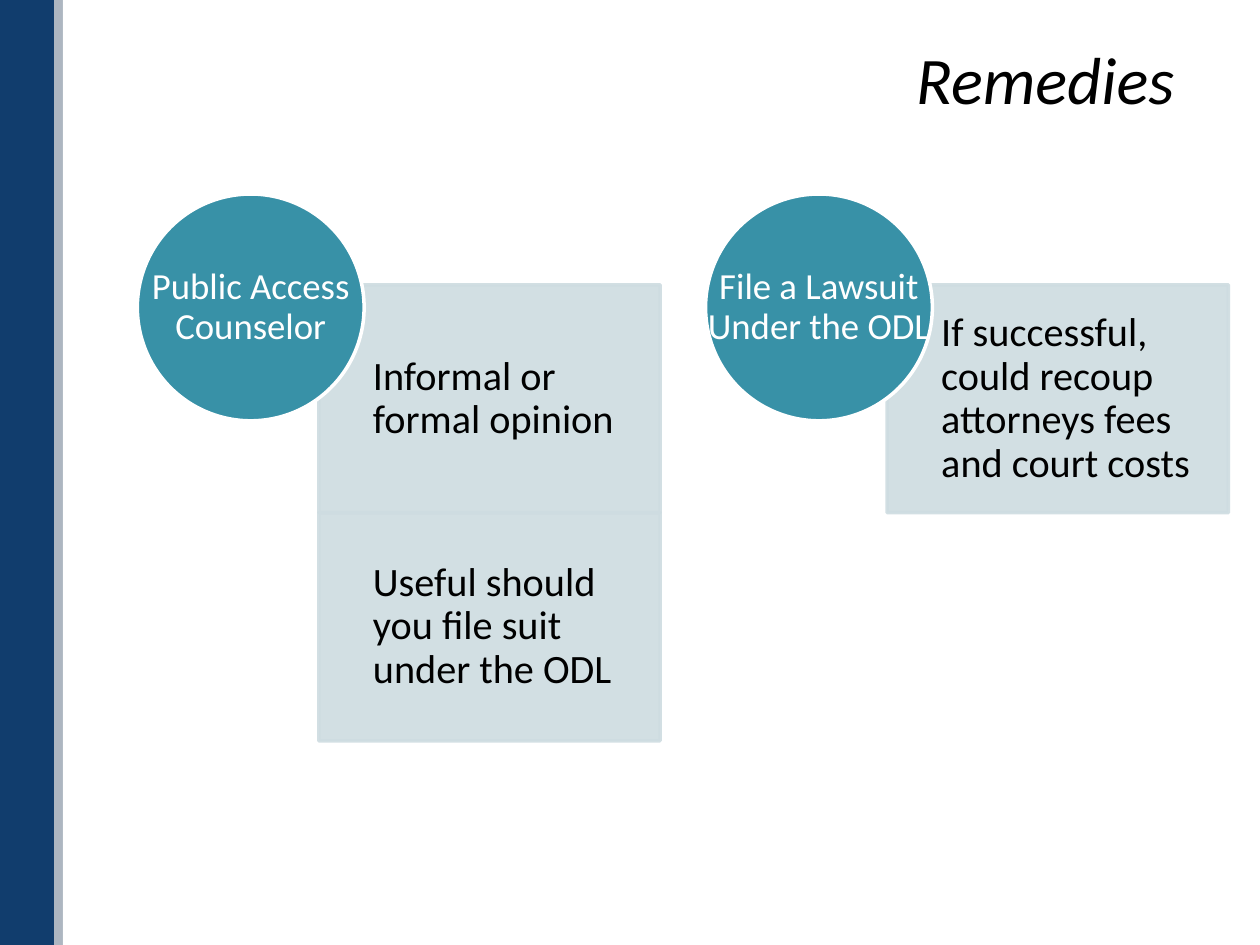
from dataclasses import dataclass

from lxml.etree import SubElement
from pptx import Presentation
from pptx.dml.color import RGBColor
from pptx.enum.shapes import MSO_SHAPE
from pptx.enum.text import MSO_ANCHOR, PP_ALIGN
from pptx.oxml.ns import qn
from pptx.util import Inches, Pt

NAVY = RGBColor(0x11, 0x3D, 0x6D)
GREY = RGBColor(0xD9, 0xD9, 0xD9)
PALE = RGBColor(0xCE, 0xDC, 0xE1)
TEAL = RGBColor(0x38, 0x91, 0xA7)
WHITE = RGBColor(0xFF, 0xFF, 0xFF)
BLACK = RGBColor(0, 0, 0)

CARD_WIDTH, CARD_HEIGHT, CARD_TOP = 2.71, 1.81, 2.26
CARD_OFFSET, CARD_INDENT = 1.44, 0.43
CIRCLE_SIZE, CIRCLE_TOP = 1.8, 1.54
FIRST_LEFT, COLUMN_STEP = 1.09, 4.51


@dataclass(frozen=True)
class Area:
    left: float
    top: float
    width: float
    height: float

    def lengths(self) -> list:
        return [Inches(n) for n in (self.left, self.top, self.width, self.height)]


@dataclass(frozen=True)
class Remedy:
    name: str
    details: tuple[str, ...]


REMEDIES = (
    Remedy("Public Access Counselor",
           ("Informal or formal opinion", "Useful should you file suit under the ODL")),
    Remedy("File a Lawsuit Under the ODL",
           ("If successful, could recoup attorneys fees and court costs",)),
)


def set_opacity(fill_parent, percent: int) -> None:
    """Make the solid colour under a fill or line element translucent."""
    color = fill_parent.find(qn("a:solidFill"))[0]
    SubElement(color, qn("a:alpha"), val=str(percent * 1000))


def add_figure(slide, kind: MSO_SHAPE, area: Area, fill: RGBColor,
               line: RGBColor | None = None, opacity: int = 100) -> None:
    figure = slide.shapes.add_shape(kind, *area.lengths())
    figure.shadow.inherit = False
    figure.fill.solid()
    figure.fill.fore_color.rgb = fill
    if line is None:
        figure.line.fill.background()
    else:
        figure.line.color.rgb = line
        figure.line.width = Pt(2)
    if opacity < 100:
        properties = figure.element.spPr
        set_opacity(properties, opacity)
        if line is not None:
            set_opacity(properties.find(qn("a:ln")), opacity)


def add_text(slide, area: Area, text: str, size: int, color: RGBColor,
             align: PP_ALIGN, margins: tuple[float, float, float, float],
             spacing: float = 0.9, italic: bool = False) -> None:
    """Add a vertically centred text box; margins run left, top, right, bottom."""
    frame = slide.shapes.add_textbox(*area.lengths()).text_frame
    left, top, right, bottom = (Inches(margin) for margin in margins)
    frame_format = {
        "word_wrap": True, "vertical_anchor": MSO_ANCHOR.MIDDLE,
        "margin_left": left, "margin_top": top,
        "margin_right": right, "margin_bottom": bottom,
    }
    for name, value in frame_format.items():
        setattr(frame, name, value)
    para = frame.paragraphs[0]
    para.alignment = align
    para.line_spacing = spacing
    span = para.add_run()
    span.text = text
    for name, value in {"name": "Calibri", "size": Pt(size), "italic": italic}.items():
        setattr(span.font, name, value)
    span.font.color.rgb = color


def add_remedy(slide, remedy: Remedy, left: float) -> None:
    """Draw the stacked detail cards with the name circle over their corner."""
    card_left = left + CARD_OFFSET
    for row, detail in enumerate(remedy.details):
        top = CARD_TOP + row * CARD_HEIGHT
        add_figure(slide, MSO_SHAPE.RECTANGLE,
                   Area(card_left, top, CARD_WIDTH, CARD_HEIGHT), PALE, PALE, 90)
        add_text(slide, Area(card_left + CARD_INDENT, top,
                             CARD_WIDTH - CARD_INDENT, CARD_HEIGHT),
                 detail, 23, BLACK, PP_ALIGN.LEFT, (0, 0.18, 0.18, 0.18))
    circle = Area(left, CIRCLE_TOP, CIRCLE_SIZE, CIRCLE_SIZE)
    add_figure(slide, MSO_SHAPE.OVAL, circle, TEAL, WHITE)
    add_text(slide, circle, remedy.name, 21, WHITE, PP_ALIGN.CENTER, (0, 0, 0, 0))


def main() -> None:
    deck = Presentation()
    deck.slide_width, deck.slide_height = Inches(10), Inches(7.5)
    slide = deck.slides.add_slide(deck.slide_layouts[6])
    slide.background.fill.solid()
    slide.background.fill.fore_color.rgb = NAVY

    add_figure(slide, MSO_SHAPE.RECTANGLE, Area(0.5, 0, 9.5, 7.5), WHITE)
    add_figure(slide, MSO_SHAPE.RECTANGLE, Area(0.43, 0, 0.07, 7.5), GREY, opacity=78)
    add_text(slide, Area(1.75, 0.25, 7.67, 0.74), "Remedies", 38, BLACK,
             PP_ALIGN.RIGHT, (0.1, 0.05, 0.1, 0.05), spacing=1.0, italic=True)
    for column, remedy in enumerate(REMEDIES):
        add_remedy(slide, remedy, FIRST_LEFT + column * COLUMN_STEP)

    deck.save("out.pptx")


if __name__ == "__main__":
    main()
